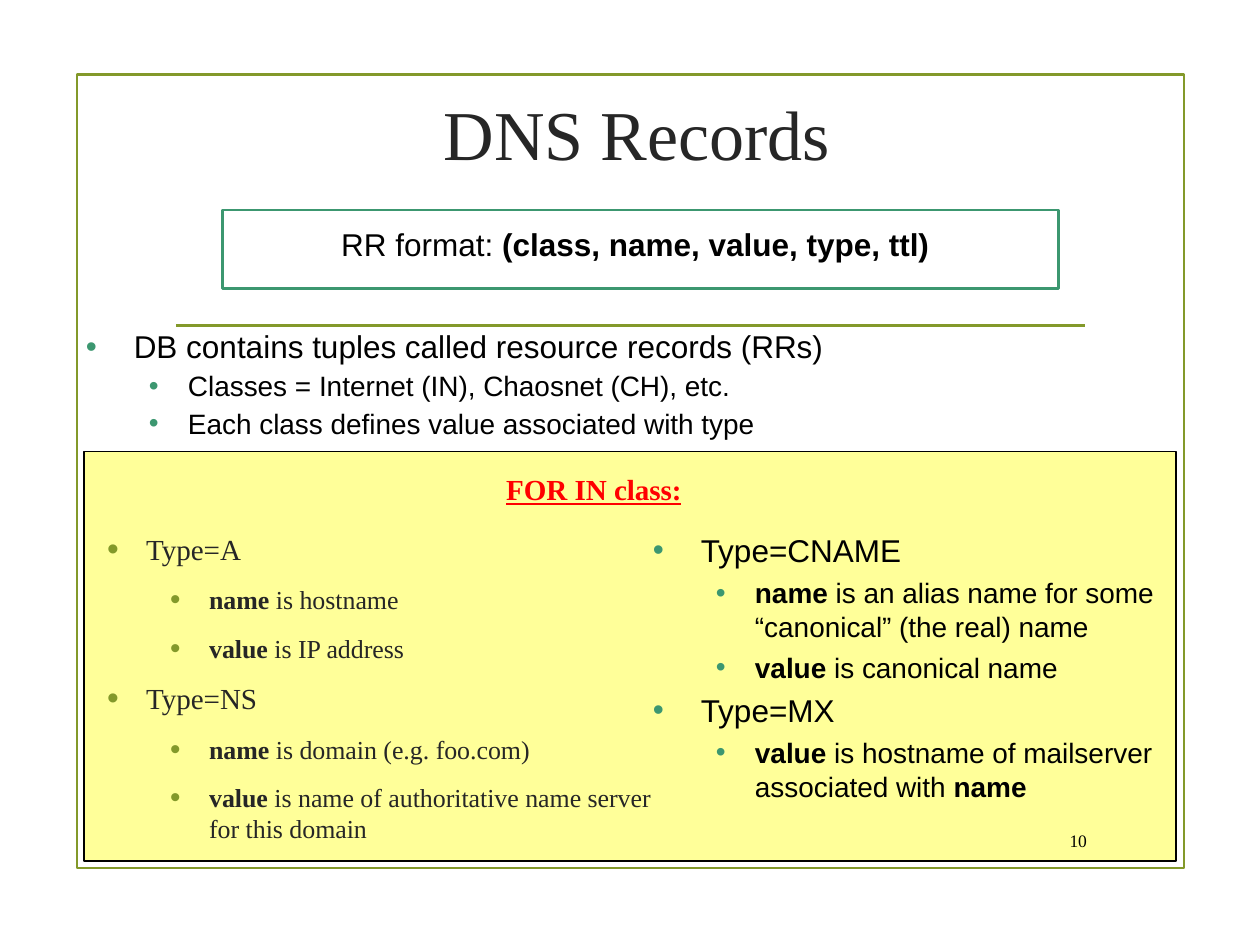
from lxml import etree
from pptx import Presentation
from pptx.dml.color import RGBColor
from pptx.enum.shapes import MSO_CONNECTOR, MSO_SHAPE
from pptx.enum.text import MSO_ANCHOR, MSO_AUTO_SIZE, PP_ALIGN
from pptx.oxml.ns import qn
from pptx.util import Inches, Pt

RECTANGLE = MSO_SHAPE.RECTANGLE
STRAIGHT = MSO_CONNECTOR.STRAIGHT
TOP, MIDDLE = MSO_ANCHOR.TOP, MSO_ANCHOR.MIDDLE
LEFT, CENTER, RIGHT = PP_ALIGN.LEFT, PP_ALIGN.CENTER, PP_ALIGN.RIGHT
NO_AUTOFIT = MSO_AUTO_SIZE.NONE

THEME = {
    "olive": "83992A", "green": "3C9770", "yellow": "FFFF99",
    "black": "000000", "ink": "262626", "red": "FF0000",
    "serif": "Times New Roman", "sans": "Arial",
    "title": 40, "serif_sizes": (16.6, 14.8), "sans_sizes": (18, 16), "number": 10,
}
CELL = Inches(1) / 12
TWO_CONTENT = 3

PLAIN = {"font": THEME["sans"], "sizes": THEME["sans_sizes"], "color": THEME["black"]}
SERIF = {"font": THEME["serif"], "sizes": THEME["serif_sizes"], "color": THEME["ink"]}
SANS_LIST = PLAIN | {"bullet": THEME["green"], "margins": (0.38, 0.81), "indents": (0.38, 0.31), "before": 4}
SERIF_LIST = SERIF | {"bullet": THEME["olive"], "bullet_size": 115, "margins": (0.31, 0.81),
                      "indents": (0.31, 0.31), "before": 4, "after": 6}


def grid(*cells):
    return [round(cell * CELL) for cell in cells]


def write(box, place, lines, style, align=LEFT, anchor=TOP):
    box.left, box.top, box.width, box.height = grid(*place)
    frame = box.text_frame
    frame.word_wrap = True
    frame.auto_size = NO_AUTOFIT
    frame.vertical_anchor = anchor
    for number, (level, spans) in enumerate(lines):
        para = frame.add_paragraph() if number else frame.paragraphs[0]
        para.level = level
        para.alignment = align
        para.line_spacing = style.get("spacing", 1.0)
        para.space_before = Pt(style.get("before", 0) if number else 0)
        para.space_after = Pt(style.get("after", 0))
        properties = para._p.get_or_add_pPr()
        if "bullet" in style:
            properties.set("marL", str(Inches(style["margins"][level])))
            properties.set("indent", str(-Inches(style["indents"][level])))
            color = etree.SubElement(properties, qn("a:buClr"))
            etree.SubElement(color, qn("a:srgbClr"), val=style["bullet"])
            etree.SubElement(properties, qn("a:buSzPct"), val=str(style.get("bullet_size", 100) * 1000))
            etree.SubElement(properties, qn("a:buFont"), typeface=THEME["sans"])
            etree.SubElement(properties, qn("a:buChar"), char="•")
        else:
            properties.set("marL", "0")
            properties.set("indent", "0")
            etree.SubElement(properties, qn("a:buNone"))
        for words, bold in spans:
            span = para.add_run()
            span.text = words
            span.font.name = style["font"]
            span.font.size = Pt(style["sizes"][level])
            span.font.color.rgb = RGBColor.from_string(style["color"])
            span.font.bold = bold
            span.font.underline = style.get("underline", False)


deck = Presentation()
deck.slide_width, deck.slide_height = grid(120, 90)
page = deck.slides.add_slide(deck.slide_layouts[TWO_CONTENT])
title, heading, left_list = page.placeholders

for place, fill, line, weight in [
    ((7.3, 7.1, 105.5, 75.6), None, THEME["olive"], 1.25),
    ((8, 43, 104, 39), THEME["yellow"], THEME["black"], 0.75),
    ((21.2, 20, 79.6, 7.5), None, THEME["green"], 1.5),
]:
    panel = page.shapes.add_shape(RECTANGLE, *grid(*place))
    panel.shadow.inherit = False
    panel.line.color.rgb = RGBColor.from_string(line)
    panel.line.width = Pt(weight)
    if fill:
        panel.fill.solid()
        panel.fill.fore_color.rgb = RGBColor.from_string(fill)
    else:
        panel.fill.background()

rule = page.shapes.add_connector(STRAIGHT, *grid(16.8, 31, 103.3, 31))
rule.line.color.rgb = RGBColor.from_string(THEME["olive"])
rule.line.width = Pt(1.25)
etree.SubElement(rule._element.spPr, qn("a:effectLst"))

for placeholder in (title, heading, left_list):
    placeholder._element.getparent().append(placeholder._element)

write(title, (16, 4, 89.3, 17.2), [(0, [("DNS Records", False)])],
      SERIF | {"sizes": (THEME["title"],)}, CENTER, MIDDLE)
write(heading, (47, 44.3, 26.6, 6.7), [(0, [("FOR IN class:", True)])],
      SERIF | {"color": THEME["red"], "underline": True})
write(left_list, (9, 50, 56, 30.5), [
    (0, [("Type=A", False)]),
    (1, [("name", True), (" is hostname", False)]),
    (1, [("value", True), (" is IP address", False)]),
    (0, [("Type=NS", False)]),
    (1, [("name", True), (" is domain (e.g. foo.com)", False)]),
    (1, [("value", True), (" is name of authoritative name server for this domain", False)]),
], SERIF_LIST)

for place, lines, style, align, anchor in [
    ((99.5, 78.2, 5.2, 3.7), [(0, [("10", False)])],
     SERIF | {"sizes": (THEME["number"],), "color": THEME["black"]}, RIGHT, MIDDLE),
    ((20, 20.2, 81, 6),
     [(0, [("RR format: ", False), ("(class, name, value, type, ttl)", True)])],
     PLAIN, CENTER, MIDDLE),
    ((7, 31, 110, 17), [
        (0, [("DB contains tuples called resource records (RRs)", False)]),
        (1, [("Classes = Internet (IN), Chaosnet (CH), etc.", False)]),
        (1, [("Each class defines value associated with type", False)]),
    ], SANS_LIST | {"spacing": 0.9}, LEFT, TOP),
    ((61, 50, 51, 28.5), [
        (0, [("Type=CNAME", False)]),
        (1, [("name", True), (" is an alias name for some “canonical” (the real) name", False)]),
        (1, [("value", True), (" is canonical name", False)]),
        (0, [("Type=MX", False)]),
        (1, [("value", True), (" is hostname of mailserver associated with ", False), ("name", True)]),
    ], SANS_LIST, LEFT, TOP),
]:
    write(page.shapes.add_textbox(*grid(*place)), place, lines, style, align, anchor)

deck.save("out.pptx")
